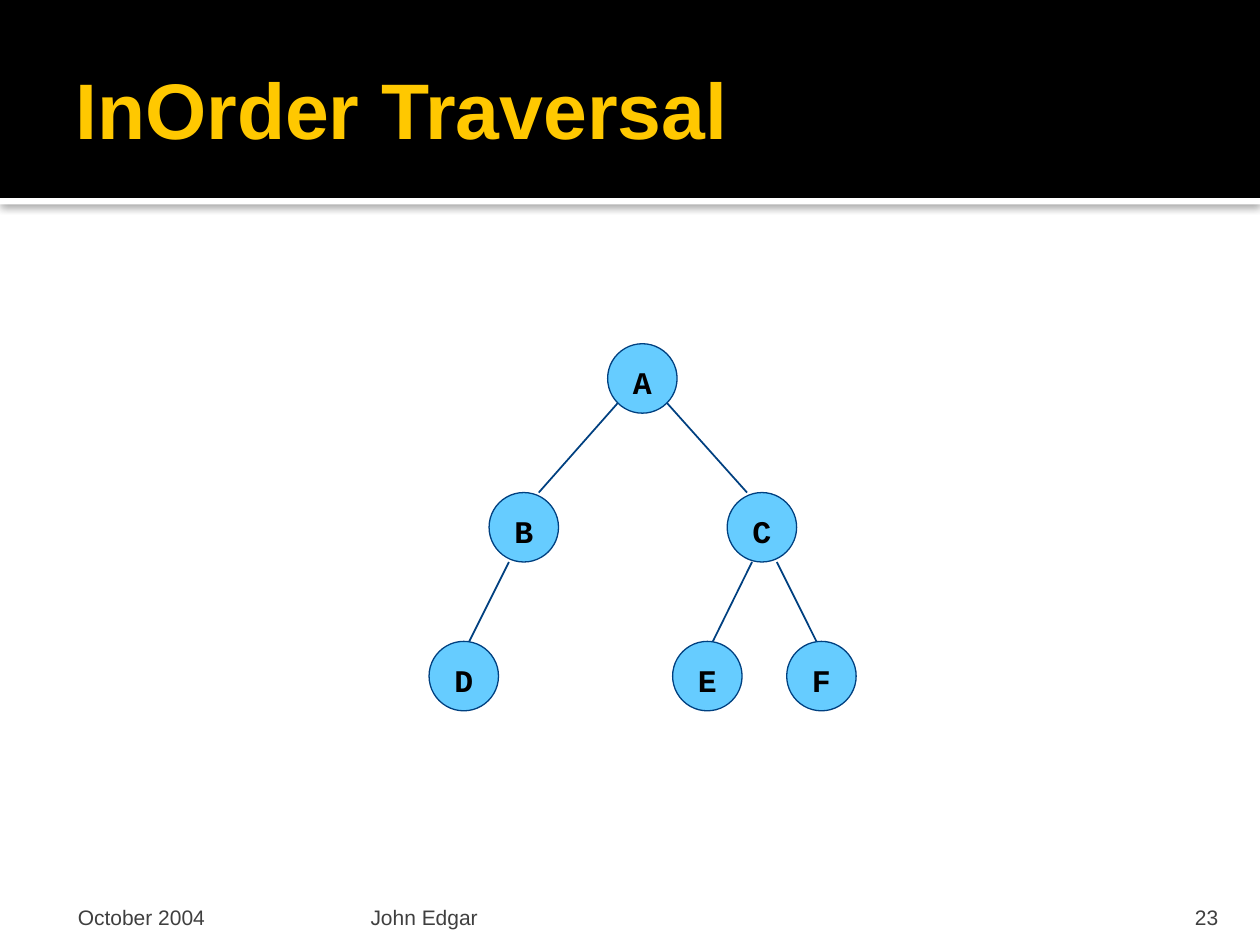
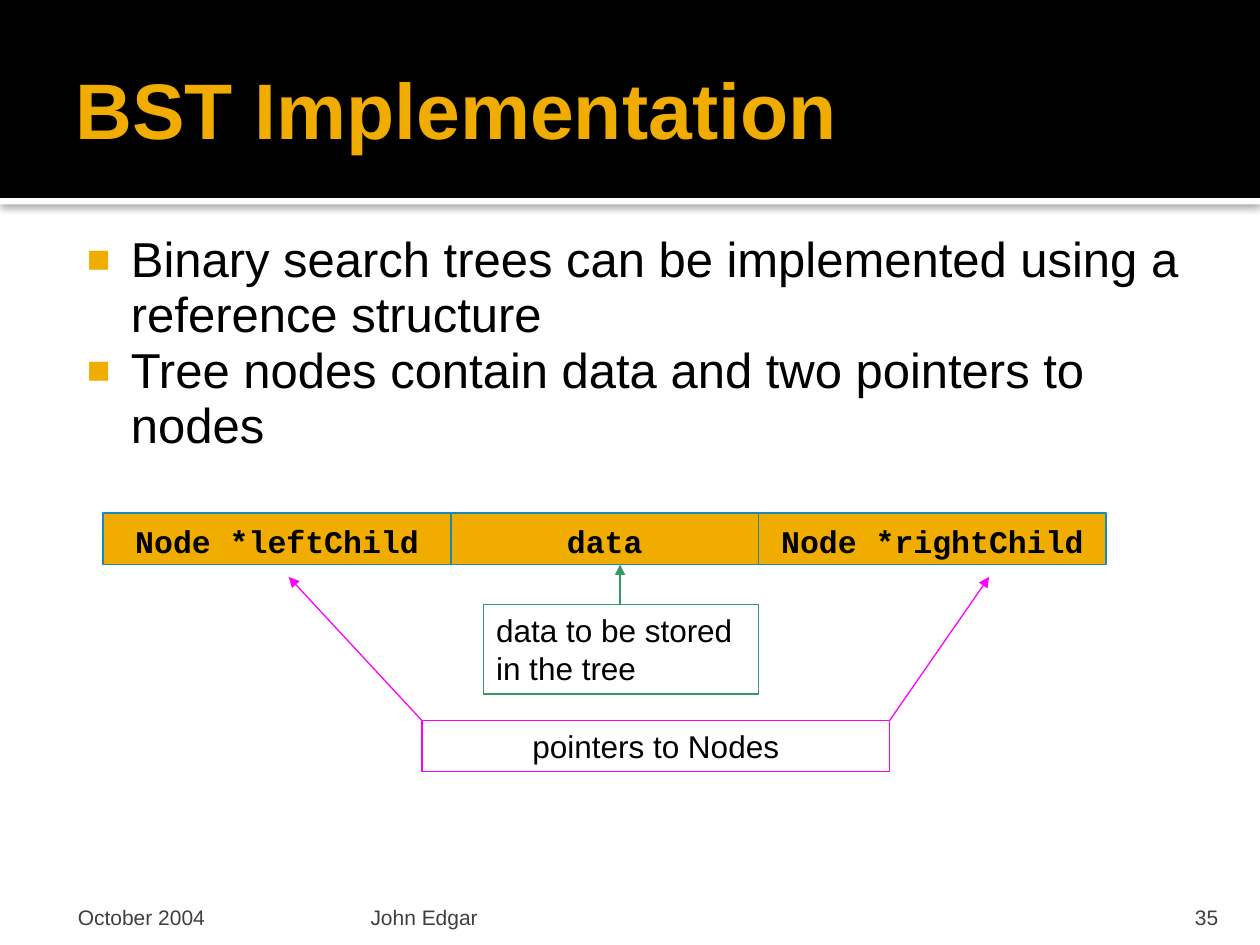
from lxml import etree
from pptx import Presentation
from pptx import util as u
from pptx.dml.color import RGBColor
from pptx.enum import shapes, text
from pptx.oxml import parse_xml
from pptx.oxml.ns import nsdecls, qn

SANS, MONO = "Arial", "Courier New"
BLACK, WHITE, GREY = "000000", "FFFFFF", "3F3F3F"
YELLOW, AMBER, TEAL = "FFC800", "F0AD00", "168BBA"
SKY, NAVY, MAGENTA, GREEN = "66CCFF", "004080", "FF00FF", "339966"
LEFT, CENTER, RIGHT = text.PP_ALIGN.LEFT, text.PP_ALIGN.CENTER, text.PP_ALIGN.RIGHT
WIDTH, HEIGHT, BAND = 25.4, 19.05, 3.99


def color(value):
    return RGBColor.from_string(value)


class Deck:
    def __init__(self):
        self.presentation = Presentation()
        self.presentation.slide_width = u.Cm(WIDTH)
        self.presentation.slide_height = u.Cm(HEIGHT)
        self.slide = None

    def new_slide(self, layout, title, title_color, number):
        self.slide = self.presentation.slides.add_slide(self.presentation.slide_layouts[layout])
        placeholders = list(self.slide.placeholders)
        strip = self.box((0, BAND, WIDTH, 0.13), fill=WHITE)
        self.add_shadow(strip)
        self.box((0, 0, WIDTH, BAND), fill=BLACK)
        for placeholder in placeholders:
            self.slide.shapes._spTree.append(placeholder._element)
        shape = self.slide.shapes.title
        self.place(shape, (1.27, 0.43, 22.86, 3.48))
        self.set_text(shape, title, 45, title_color, bold=True, insets=(0.25, 0.13, 0.13, 0.13))
        self.footer("October 2004", 1.27, 5.92, 0.3)
        self.footer("John Edgar", 7.34, 15.29, 0.13)
        self.footer(str(number), 22.78, 2.03, 0.25, RIGHT)

    def place(self, shape, bounds):
        shape.left, shape.top, shape.width, shape.height = map(u.Cm, bounds)

    def style(self, paragraph, size, text_color, font=SANS, bold=False, align=LEFT):
        paragraph.alignment = align
        paragraph.font.name = font
        paragraph.font.size = u.Pt(size)
        paragraph.font.bold = bold
        paragraph.font.color.rgb = color(text_color)

    def set_text(self, shape, content, size, text_color, font=SANS, bold=False, align=LEFT,
                 anchor=text.MSO_ANCHOR.MIDDLE, insets=(0.25, 0.13, 0.25, 0.13), wrap=True):
        frame = shape.text_frame
        frame.text = content
        frame.auto_size = text.MSO_AUTO_SIZE.NONE
        frame.word_wrap = wrap
        frame.vertical_anchor = anchor
        (frame.margin_left, frame.margin_top,
         frame.margin_right, frame.margin_bottom) = map(u.Cm, insets)
        for paragraph in frame.paragraphs:
            self.style(paragraph, size, text_color, font, bold, align)

    def footer(self, content, left, width, inset, align=LEFT):
        shape = self.slide.shapes.add_textbox(*map(u.Cm, (left, 17.98, width, 0.76)))
        self.set_text(shape, content, 12, GREY, align=align, anchor=text.MSO_ANCHOR.BOTTOM,
                      insets=(inset, 0.13, inset, 0))

    def box(self, bounds, fill=None, line=None, kind=shapes.MSO_SHAPE.RECTANGLE):
        shape = self.slide.shapes.add_shape(kind, *map(u.Cm, bounds))
        shape.shadow.inherit = False
        if fill:
            shape.fill.solid()
            shape.fill.fore_color.rgb = color(fill)
        else:
            shape.fill.background()
        if line:
            shape.line.color.rgb = color(line)
            shape.line.width = u.Pt(0.75)
        else:
            shape.line.fill.background()
        return shape

    def add_shadow(self, shape):
        effects = shape._element.spPr.find(qn("a:effectLst"))
        effects.append(parse_xml(
            f'<a:outerShdw {nsdecls("a")} blurRad="{u.Pt(5)}" dist="{u.Pt(0.8)}" dir="5400000" '
            f'rotWithShape="0"><a:srgbClr val="{BLACK}"><a:alpha val="60000"/></a:srgbClr>'
            '</a:outerShdw>'))

    def line(self, start, end, line_color, width=0.75, arrow=False):
        connector = self.slide.shapes.add_connector(
            shapes.MSO_CONNECTOR.STRAIGHT, *map(u.Cm, (*start, *end)))
        connector.line.color.rgb = color(line_color)
        connector.line.width = u.Pt(width)
        if arrow:
            etree.SubElement(connector.line._get_or_add_ln(), qn("a:tailEnd"), type="triangle")
        etree.SubElement(connector._element.spPr, qn("a:effectLst"))

    def bullets(self, items, bounds):
        shape = self.slide.placeholders[1]
        self.place(shape, bounds)
        frame = shape.text_frame
        frame.text = "\n".join(items)
        for paragraph in frame.paragraphs:
            properties = paragraph._p.get_or_add_pPr()
            properties.set("marL", str(u.Cm(1.22)))
            properties.set("indent", str(-u.Cm(0.89)))
            marker = etree.SubElement(properties, qn("a:buClr"))
            etree.SubElement(marker, qn("a:srgbClr"), val=AMBER)
            etree.SubElement(properties, qn("a:buSzPct"), val="80000")
            etree.SubElement(properties, qn("a:buFont"), typeface=SANS)
            etree.SubElement(properties, qn("a:buChar"), char="■")
            paragraph.line_spacing = 0.94
            paragraph.space_before = u.Pt(0)
            self.style(paragraph, 28, BLACK)
        frame.auto_size = text.MSO_AUTO_SIZE.NONE
        frame.vertical_anchor = text.MSO_ANCHOR.TOP
        frame.margin_left, frame.margin_top = u.Cm(0.15), u.Cm(0.25)
        frame.margin_right, frame.margin_bottom = u.Cm(0.25), u.Cm(0.13)

    def tree_node(self, label, center, diameter):
        x, y = center
        shape = self.box((x - diameter / 2, y - diameter / 2, diameter, diameter),
                         SKY, NAVY, shapes.MSO_SHAPE.OVAL)
        self.set_text(shape, label, 18, BLACK, MONO, True, CENTER,
                      insets=(0, 0.15, 0, 0), wrap=False)


def traversal_slide(deck):
    deck.new_slide(5, "InOrder Traversal", YELLOW, 23)
    diameter, root_y, level_gap = 1.4, 7.63, 3
    radius = diameter / 2
    levels = [{"A": 12.95}, {"B": 10.56, "C": 15.36}, {"D": 9.35, "E": 14.26, "F": 16.56}]
    centers = {label: (x, root_y + depth * level_gap)
               for depth, level in enumerate(levels) for label, x in level.items()}
    edges = [("A", "B", -0.5, 0.5, 0.3), ("A", "C", 0.5, 0.5, -0.3),
             ("B", "D", -0.3, radius, 0.11), ("C", "E", -0.2, radius, 0.11),
             ("C", "F", 0.3, radius, -0.1)]
    for label, center in centers.items():
        deck.tree_node(label, center, diameter)
    for parent, child, start_x, start_y, end_x in edges:
        (parent_x, parent_y), (child_x, child_y) = centers[parent], centers[child]
        deck.line((parent_x + start_x, parent_y + start_y),
                  (child_x + end_x, child_y - radius), NAVY, 1)


def implementation_slide(deck):
    deck.new_slide(1, "BST Implementation", AMBER, 35)
    deck.bullets(["Binary search trees can be implemented using a reference structure",
                  "Tree nodes contain data and two pointers to nodes"],
                 (1.27, 4.45, 22.86, 5.23))
    left, top, height = 2.08, 10.34, 1.04
    for field, width in [("Node *leftChild", 7.01), ("data", 6.2), ("Node *rightChild", 7.01)]:
        cell = deck.box((left, top, width, height), AMBER, TEAL)
        deck.set_text(cell, field, 18, BLACK, MONO, True, CENTER, insets=(0.25, 0.2, 0.25, 0.13))
        left += width

    pointers_left, pointers_top, pointers_width = 8.51, 14.53, 9.42
    pointers = deck.box((pointers_left, pointers_top, pointers_width, 1.02), line=MAGENTA)
    deck.set_text(pointers, "pointers to Nodes", 18, BLACK, align=CENTER)
    for start_x, end_x in [(pointers_left, 5.82), (pointers_left + pointers_width, 19.94)]:
        deck.line((start_x, pointers_top), (end_x, 11.63), MAGENTA, arrow=True)

    data_top = 12.19
    data = deck.box((9.75, data_top, 5.54, 1.8), line=GREEN)
    deck.set_text(data, "data to be stored in the tree", 18, BLACK)
    deck.line((12.5, data_top), (12.5, top + height), GREEN, arrow=True)


def main():
    deck = Deck()
    traversal_slide(deck)
    implementation_slide(deck)
    deck.presentation.save("out.pptx")


if __name__ == "__main__":
    main()
